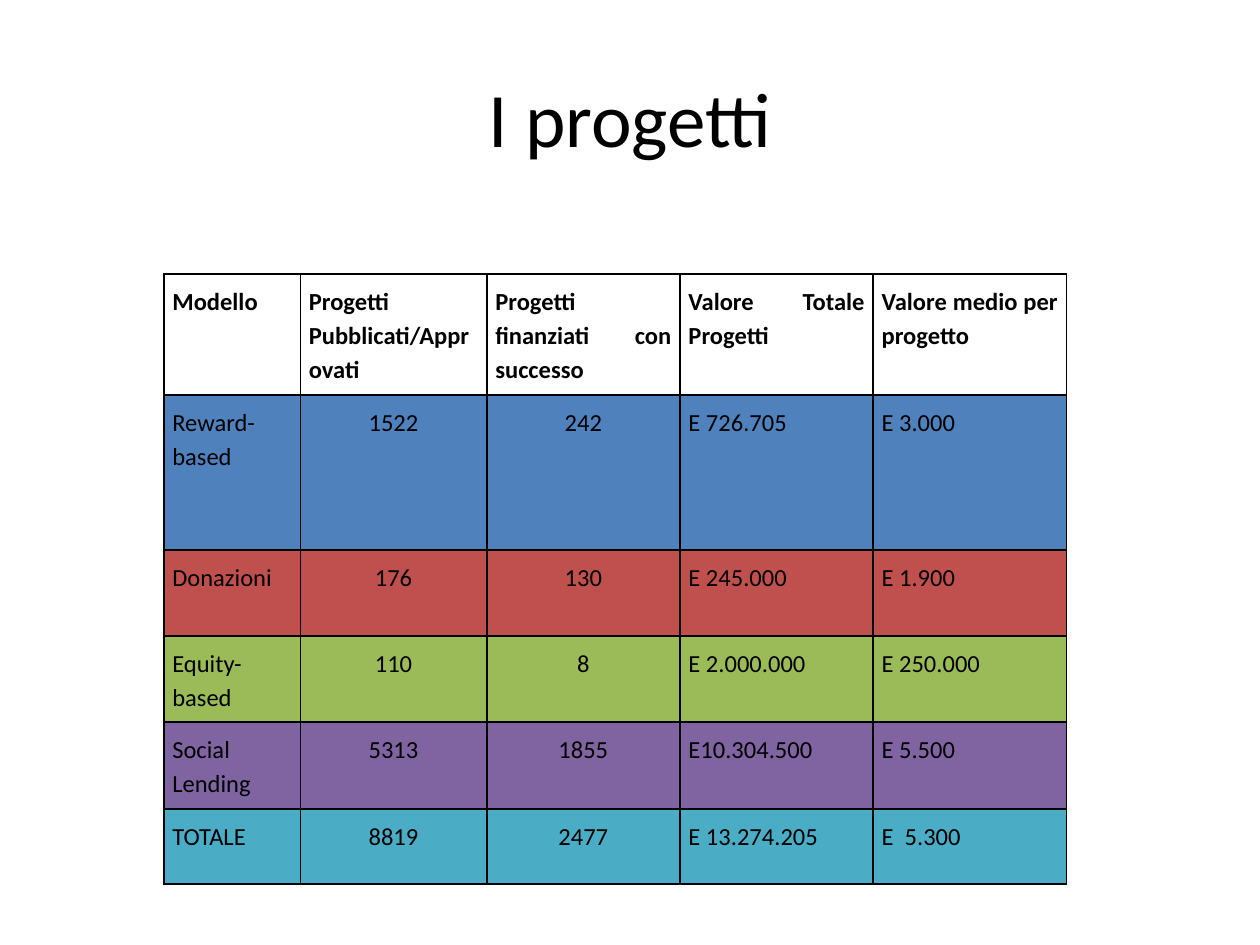
from dataclasses import dataclass

from lxml import etree
from pptx import Presentation
from pptx.dml.color import RGBColor
from pptx.enum import text
from pptx.oxml import ns
from pptx.util import Pt


@dataclass(frozen=True)
class Theme:
    """Colours and type sizes of the slide."""
    font: str = "Calibri"
    ink: str = "000000"
    header: str = "FFFFFF"
    rows: tuple = ("4F81BD", "C0504D", "9BBB59", "8064A2", "4BACC6")
    title_size: float = 44
    table_size: float = 14
    border: float = 1
    inset: float = 4.9
    line_spacing: float = 1.15


THEME = Theme()
ALIGN = text.PP_ALIGN
COLUMN_WIDTHS = (78, 106.6, 110.4, 110.4, 110.4)
ROW_HEIGHTS = (69.1, 88.6, 49.1, 49.1, 49.7, 42.9)
PROJECTS = (
    ("Modello", "Progetti Pubblicati/Approvati", "Progetti finanziati con successo",
     "Valore Totale Progetti", "Valore medio per progetto"),
    ("Reward-based", "1522", "242", "E 726.705", "E 3.000"),
    ("Donazioni", "176", "130", "E 245.000", "E 1.900"),
    ("Equity-based", "110", "8", "E 2.000.000", "E 250.000"),
    ("Social Lending", "5313", "1855", "E10.304.500", "E 5.500"),
    ("TOTALE", "8819", "2477", "E 13.274.205", "E  5.300"),
)


def format_paragraph(para, size, align, bold=False):
    """Apply the theme font and the given alignment to a paragraph."""
    para.alignment = align
    for span in para.runs:
        span.font.name = THEME.font
        span.font.size = Pt(size)
        span.font.bold = bold
        span.font.color.rgb = RGBColor.from_string(THEME.ink)


def add_borders(cell):
    """Draw a solid line on all four sides of a cell."""
    properties = cell._tc.get_or_add_tcPr()
    for index, side in enumerate(("a:lnL", "a:lnR", "a:lnT", "a:lnB")):
        line = etree.Element(ns.qn(side), w=str(Pt(THEME.border)))
        fill = etree.SubElement(line, ns.qn("a:solidFill"))
        etree.SubElement(fill, ns.qn("a:srgbClr"), val=THEME.ink)
        properties.insert(index, line)


def fill_cell(cell, content, fill, align, bold):
    """Write one cell with its fill, margins and borders."""
    cell.text_frame.text = content
    cell.margin_left = cell.margin_right = Pt(THEME.inset)
    cell.margin_top = cell.margin_bottom = Pt(THEME.inset)
    cell.vertical_anchor = text.MSO_ANCHOR.TOP
    cell.fill.solid()
    cell.fill.fore_color.rgb = RGBColor.from_string(fill)
    para = cell.text_frame.paragraphs[0]
    para.line_spacing = THEME.line_spacing
    format_paragraph(para, THEME.table_size, align, bold)
    add_borders(cell)


def place_title(page, content, left, top, width, height):
    """Place the slide title in the given box."""
    box = page.shapes.title
    box.left, box.top, box.width, box.height = map(Pt, (left, top, width, height))
    box.text_frame.text = content
    box.text_frame.vertical_anchor = text.MSO_ANCHOR.MIDDLE
    format_paragraph(box.text_frame.paragraphs[0], THEME.title_size, ALIGN.CENTER)


def place_projects(page, left, top, width, height):
    """Place the project table, sharing the box out by column and row weight."""
    table = page.shapes.add_table(
        len(PROJECTS), len(COLUMN_WIDTHS), Pt(left), Pt(top), Pt(width), Pt(height)).table
    table.first_row = table.horz_banding = False
    for column, share in zip(table.columns, COLUMN_WIDTHS):
        column.width = Pt(width * share / sum(COLUMN_WIDTHS))
    for row, share in zip(table.rows, ROW_HEIGHTS):
        row.height = Pt(height * share / sum(ROW_HEIGHTS))
    for r, (record, fill) in enumerate(zip(PROJECTS, (THEME.header, *THEME.rows))):
        for c, content in enumerate(record):
            is_count = r > 0 and c in (1, 2)
            align = ALIGN.CENTER if is_count else ALIGN.JUSTIFY
            if content == "Social Lending":
                align = ALIGN.LEFT
            fill_cell(table.cell(r, c), content, fill, align, bold=r == 0)


def main():
    """Build the slide and save the deck."""
    deck = Presentation()
    deck.slide_width, deck.slide_height = Pt(720), Pt(540)
    page = deck.slides.add_slide(deck.slide_layouts[5])
    place_title(page, "I progetti", 36, 21.6, 648, 90)
    place_projects(page, 93.6, 156.6, sum(COLUMN_WIDTHS), sum(ROW_HEIGHTS))
    deck.save("out.pptx")


if __name__ == "__main__":
    main()
